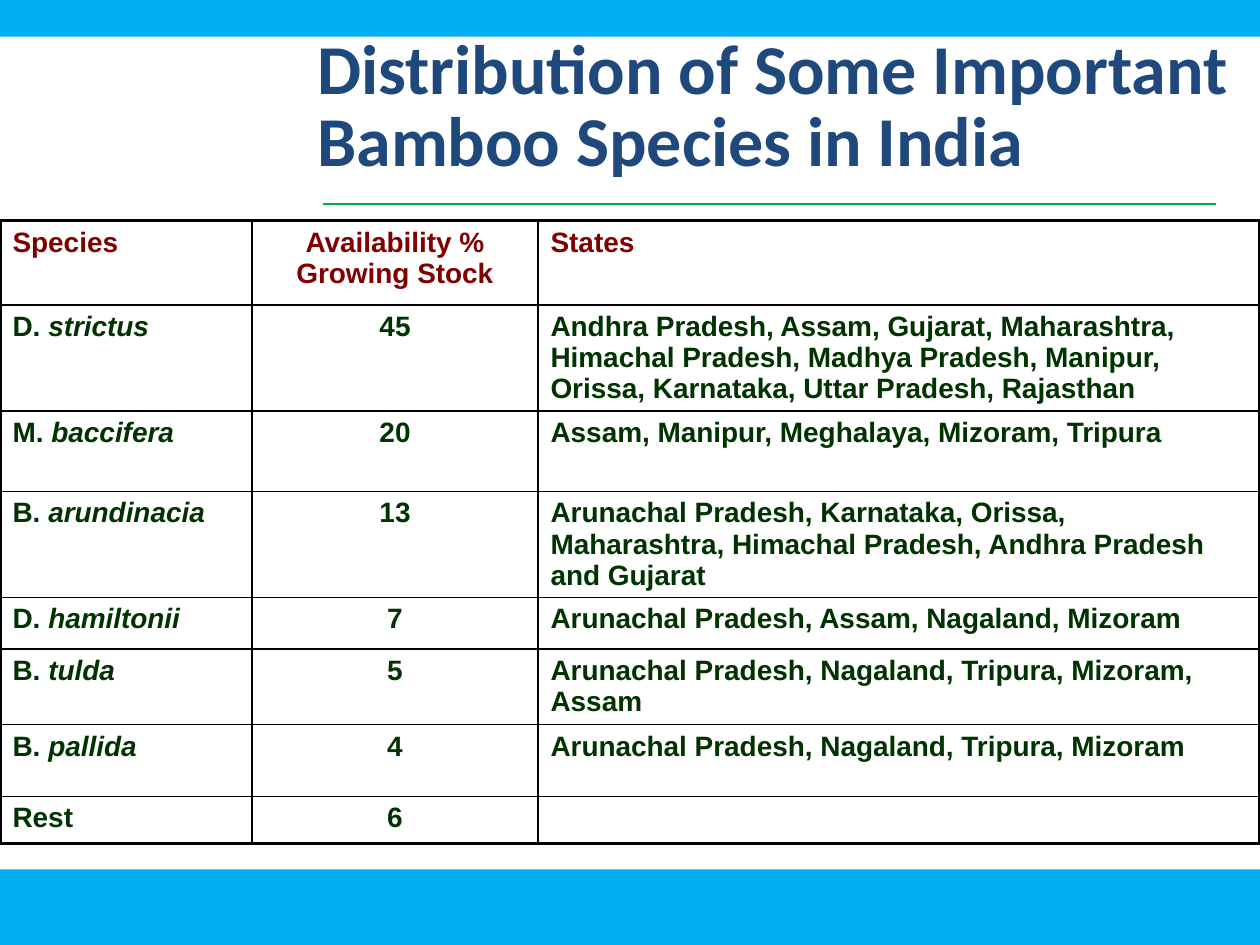
from dataclasses import dataclass
from typing import NamedTuple

from lxml.etree import SubElement
from pptx import Presentation
from pptx.dml.color import RGBColor
from pptx.enum.shapes import MSO_CONNECTOR, MSO_SHAPE
from pptx.enum.text import PP_ALIGN
from pptx.oxml import parse_xml
from pptx.oxml.ns import nsdecls, qn
from pptx.util import Inches, Pt


@dataclass(frozen=True)
class Theme:
    band: str = "00B0F0"
    rule: str = "00B050"
    title: str = "1F497D"
    header: str = "800000"
    body: str = "003300"
    border: str = "000000"
    title_font: str = "Calibri"
    table_font: str = "Arial"
    title_size: float = 40
    table_size: float = 16
    outer_line: float = 2.25
    inner_line: float = 1


class Species(NamedTuple):
    genus: str
    name: str
    share: int
    states: str
    height: float


THEME = Theme()
COLUMNS = (2, 2.27, 5.73)
HEADERS = ("Species", "Availability % Growing Stock", "States")
HEADER_HEIGHT = 0.67
SPECIES = [
    Species("D. ", "strictus", 45,
            "Andhra Pradesh, Assam, Gujarat, Maharashtra, Himachal Pradesh, Madhya Pradesh, "
            "Manipur, Orissa, Karnataka, Uttar Pradesh, Rajasthan", 0.84),
    Species("M. ", "baccifera", 20, "Assam, Manipur, Meghalaya, Mizoram, Tripura", 0.64),
    Species("B. ", "arundinacia", 13,
            "Arunachal Pradesh, Karnataka, Orissa, Maharashtra, Himachal Pradesh, "
            "Andhra Pradesh and Gujarat", 0.84),
    Species("D. ", "hamiltonii", 7, "Arunachal Pradesh, Assam, Nagaland, Mizoram", 0.41),
    Species("B. ", "tulda", 5, "Arunachal Pradesh, Nagaland, Tripura, Mizoram, Assam", 0.6),
    Species("B. ", "pallida", 4, "Arunachal Pradesh, Nagaland, Tripura, Mizoram", 0.57),
    Species("Rest", "", 6, "", 0.37),
]


def write(p, text: str, *, size: float, font: str, color: str,
          italic: bool = False, align=PP_ALIGN.LEFT) -> None:
    """Add one bold run; an empty text only sets the height of the line."""
    p.alignment = align
    if not text:
        SubElement(p._p, qn("a:endParaRPr"), sz=str(int(size * 100)))
        return
    r = p.add_run()
    r.text = text
    r.font.size, r.font.name = Pt(size), font
    r.font.bold, r.font.italic = True, italic
    r.font.color.rgb = RGBColor.from_string(color)


def add_band(s, top: float, height: float) -> None:
    sp = s.shapes.add_shape(MSO_SHAPE.RECTANGLE, 0, Inches(top), Inches(10), Inches(height))
    sp.shadow.inherit = False
    sp.fill.solid()
    sp.fill.fore_color.rgb = RGBColor.from_string(THEME.band)
    sp.line.fill.background()


def add_rule(s, left: float, right: float, y: float) -> None:
    line = s.shapes.add_connector(MSO_CONNECTOR.STRAIGHT, Inches(left), Inches(y),
                                  Inches(right), Inches(y))
    line.line.color.rgb = RGBColor.from_string(THEME.rule)
    line.line.width = Pt(0.75)
    SubElement(line._element.spPr, qn("a:effectLst"))


def set_borders(cell, outer: dict[str, bool]) -> None:
    """Draw the four sides, thicker where the side is on the table's edge."""
    tcPr = cell._tc.get_or_add_tcPr()
    for i, side in enumerate("LRTB"):
        width = Pt(THEME.outer_line if outer[side] else THEME.inner_line)
        tcPr.insert(i, parse_xml(
            f'<a:ln{side} {nsdecls("a")} w="{width}"><a:solidFill>'
            f'<a:srgbClr val="{THEME.border}"/></a:solidFill></a:ln{side}>'))


def add_species_table(s) -> None:
    rows = [[[(h, False)] for h in HEADERS]]
    for sp in SPECIES:
        name = [(sp.genus, False)] + ([(sp.name, True)] if sp.name else [])
        rows.append([name, [(str(sp.share), False)], [(sp.states, False)]])
    heights = [HEADER_HEIGHT] + [sp.height for sp in SPECIES]

    table = s.shapes.add_table(len(rows), len(COLUMNS), 0, Inches(1.75),
                               Inches(sum(COLUMNS)), Inches(sum(heights))).table
    table.first_row = table.horz_banding = False
    for column, width in zip(table.columns, COLUMNS):
        column.width = Inches(width)
    for i, (row, height) in enumerate(zip(rows, heights)):
        table.rows[i].height = Inches(height)
        for j, runs in enumerate(row):
            cell = table.cell(i, j)
            cell.fill.background()
            set_borders(cell, {"L": j == 0, "R": j == len(COLUMNS) - 1,
                               "T": i == 0, "B": i == len(rows) - 1})
            for text, italic in runs:
                write(cell.text_frame.paragraphs[0], text, italic=italic,
                      size=THEME.table_size, font=THEME.table_font,
                      color=THEME.body if i else THEME.header,
                      align=PP_ALIGN.CENTER if j == 1 else PP_ALIGN.LEFT)


def add_title(s, text: str) -> None:
    tf = s.shapes.add_textbox(Inches(2.42), Inches(0.25), Inches(7.58), Inches(1.25)).text_frame
    tf.word_wrap = True
    p = tf.paragraphs[0]
    p.line_spacing = 0.85
    write(p, text, size=THEME.title_size, font=THEME.title_font, color=THEME.title)


def main() -> None:
    prs = Presentation()
    prs.slide_width, prs.slide_height = Inches(10), Inches(7.5)
    s = prs.slides.add_slide(prs.slide_layouts[6])

    # Frame of the slide
    add_band(s, 6.9, 0.6)
    add_rule(s, 2.56, 9.65, 1.62)
    add_band(s, 0, 0.29)

    # Content
    add_species_table(s)
    add_title(s, "Distribution of Some Important Bamboo Species in India")
    prs.save("out.pptx")


if __name__ == "__main__":
    main()
